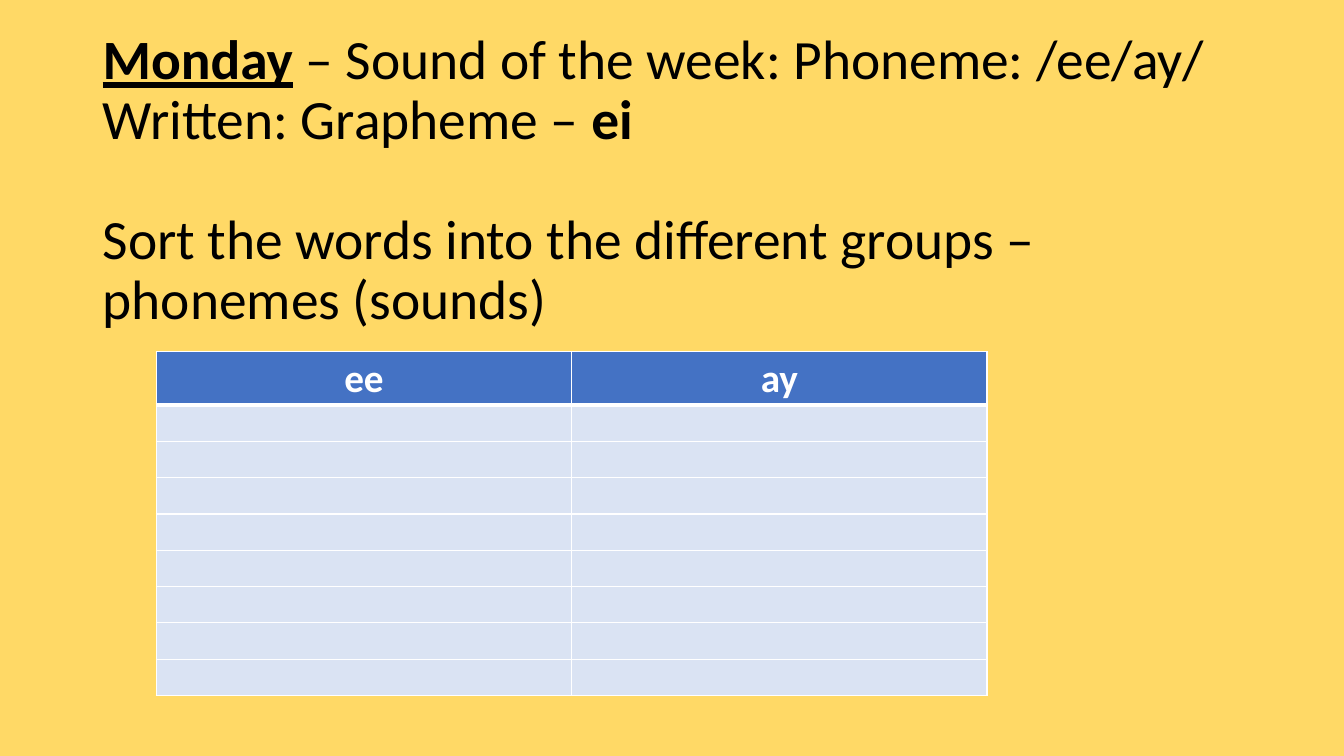
from dataclasses import dataclass

from lxml import etree
from pptx import Presentation
from pptx import util as u
from pptx.dml.color import RGBColor
from pptx.enum import text
from pptx.oxml import ns


@dataclass(frozen=True)
class Theme:
    font: str = "Calibri"
    background: str = "FFD966"
    ink: str = "000000"
    header_fill: str = "4472C4"
    body_fill: str = "DAE3F3"
    light: str = "FFFFFF"
    title_size: float = 39.6
    header_size: float = 28
    title_gap: float = 43
    rule: float = 1
    header_rule: float = 3


THEME = Theme()

TITLE = [
    [("Monday", {"bold": True, "underline": True}),
     (" – Sound of the week: Phoneme: /ee/ay/", {})],
    [("Written: Grapheme – ", {}), ("ei", {"bold": True})],
    [("Sort the words into the different groups – phonemes (sounds)", {})],
]
SOUNDS = ["ee", "ay"]
WORD_ROWS = 8


def add_run(p, words, size, color, **formats):
    r = p.add_run()
    r.text = words
    r.font.color.rgb = RGBColor.from_string(color)
    formats = {"name": THEME.font, "size": u.Pt(size), **formats}
    for name, value in formats.items():
        setattr(r.font, name, value)


def add_title(slide, left, top, width, height):
    tf = slide.shapes.add_textbox(left, top, width, height).text_frame
    tf.word_wrap = True
    tf.vertical_anchor = text.MSO_ANCHOR.MIDDLE
    for i, line in enumerate(TITLE):
        p = tf.paragraphs[0] if i == 0 else tf.add_paragraph()
        p.line_spacing = 0.9
        for words, formats in line:
            add_run(p, words, THEME.title_size, THEME.ink, **formats)
    p.space_before = u.Pt(THEME.title_gap)


def set_borders(cell, bottom, top):
    tc_pr = cell._tc.get_or_add_tcPr()
    widths = {"a:lnL": THEME.rule, "a:lnR": THEME.rule, "a:lnT": top, "a:lnB": bottom}
    for side, width in widths.items():
        ln = etree.SubElement(tc_pr, ns.qn(side), w=str(u.Pt(width)))
        fill = etree.SubElement(ln, ns.qn("a:solidFill"))
        etree.SubElement(fill, ns.qn("a:srgbClr"), val=THEME.light)


def add_sorting_table(slide, left, top, width, header_height, row_height):
    """Place one column per sound, with empty rows for the sorted words."""
    height = header_height + WORD_ROWS * row_height
    table = slide.shapes.add_table(
        WORD_ROWS + 1, len(SOUNDS), left, top, width, height).table
    table.horz_banding = False
    for i, row in enumerate(table.rows):
        row.height = row_height if i else header_height
        for cell in row.cells:
            cell.margin_left = cell.margin_right = u.Inches(0.07)
            cell.margin_top = cell.margin_bottom = 0
            set_borders(cell,
                        bottom=THEME.rule if i else THEME.header_rule,
                        top=THEME.header_rule if i == 1 else THEME.rule)
            cell.fill.solid()
            cell.fill.fore_color.rgb = RGBColor.from_string(
                THEME.body_fill if i else THEME.header_fill)
    for cell, sound in zip(table.rows[0].cells, SOUNDS):
        p = cell.text_frame.paragraphs[0]
        p.alignment = text.PP_ALIGN.CENTER
        p.line_spacing = 1.07
        add_run(p, sound, THEME.header_size, THEME.light, bold=True)


def main():
    prs = Presentation()
    prs.slide_width, prs.slide_height = u.Inches(13.33), u.Inches(7.5)
    slide = prs.slides.add_slide(prs.slide_layouts[6])
    slide.background.fill.solid()
    slide.background.fill.fore_color.rgb = RGBColor.from_string(THEME.background)
    add_title(slide, u.Inches(0.92), u.Inches(0.25), u.Inches(11.5), u.Inches(3.1))
    add_sorting_table(slide, u.Inches(1.55), u.Inches(3.49), u.Inches(8.24),
                      header_height=u.Inches(0.53), row_height=u.Inches(0.36))
    prs.save("out.pptx")


if __name__ == "__main__":
    main()
